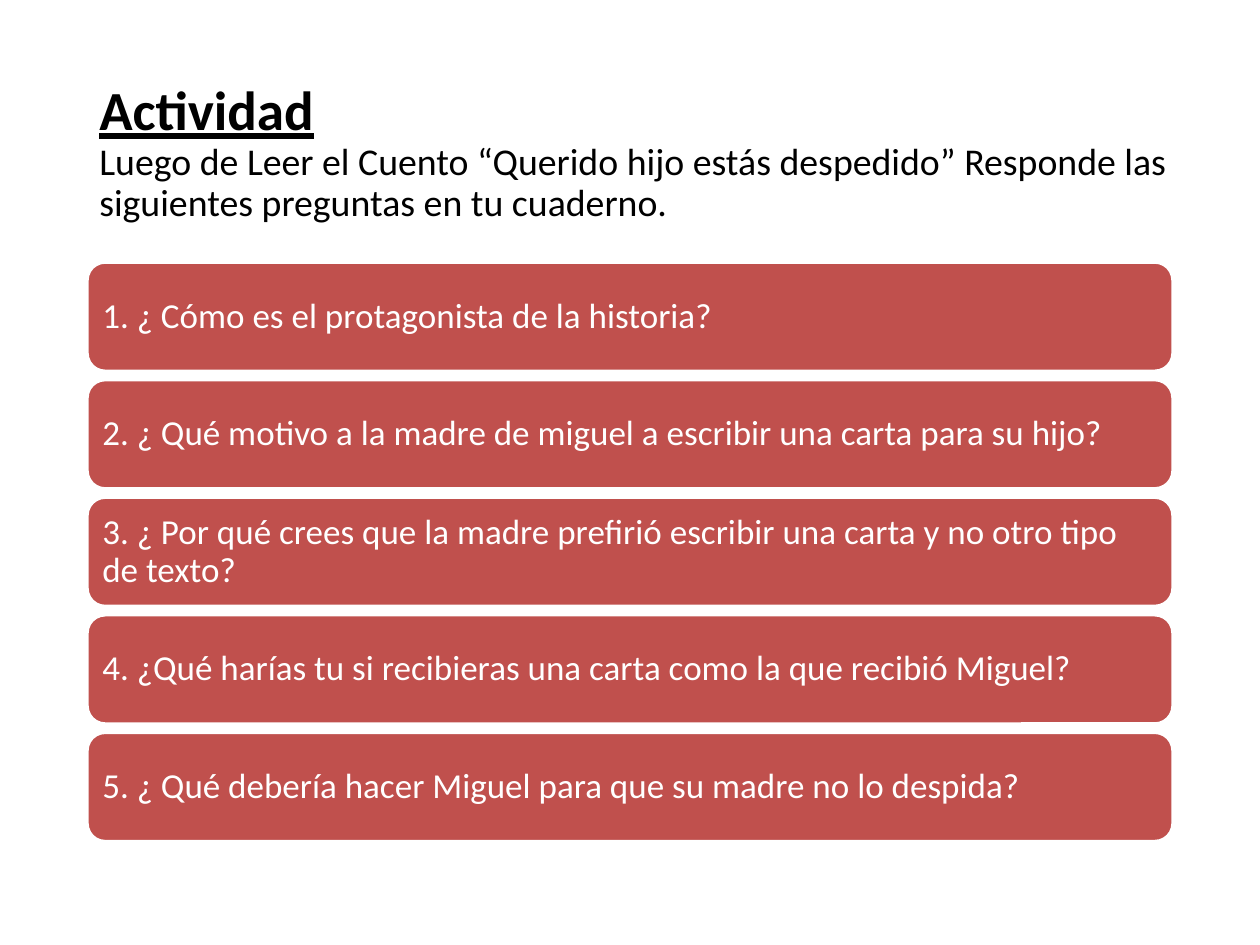
from pptx import Presentation
from pptx.dml.color import RGBColor
from pptx.enum.shapes import MSO_SHAPE as Shape
from pptx.enum.text import MSO_ANCHOR as Anchor, PP_ALIGN as Align
from pptx.util import Inches, Pt

FONT = "Calibri"
BLACK, WHITE, RED = "000000", "FFFFFF", "C0504D"
LEFT = 0.69
GAP_SHARE = 0.07  # gap between cards, as a share of the row pitch

QUESTIONS = [
    "1. ¿ Cómo es el protagonista de la historia?",
    "2. ¿ Qué motivo a la madre de miguel a escribir una carta para su hijo?",
    "3. ¿ Por qué crees que la madre prefirió escribir una carta y no otro tipo de texto?",
    "4. ¿Qué harías tu si recibieras una carta como la que recibió Miguel?",
    "5. ¿ Qué debería hacer Miguel para que su madre no lo despida?",
]


def color(value):
    return RGBColor.from_string(value)


def add_text(paragraph, text, *, size, fill=BLACK, bold=False, underline=False):
    paragraph.alignment = Align.LEFT
    paragraph.line_spacing = 0.9
    run = paragraph.add_run()
    run.text = text
    font = run.font
    font.name, font.size = FONT, Pt(size)
    font.bold, font.underline = bold, underline
    font.color.rgb = color(fill)


def prepare_frame(shape, inset_x, inset_y):
    frame = shape.text_frame
    frame.word_wrap = True
    frame.vertical_anchor = Anchor.MIDDLE
    frame.margin_left = frame.margin_right = Inches(inset_x)
    frame.margin_top = frame.margin_bottom = Inches(inset_y)
    return frame


def add_heading(slide, left, top, width, height):
    box = slide.shapes.add_textbox(*map(Inches, (left, top, width, height)))
    frame = prepare_frame(box, 0.1, 0.05)
    paragraph = frame.paragraphs[0]
    add_text(paragraph, "Actividad", size=31.5, bold=True, underline=True)
    paragraph.add_line_break()
    add_text(
        paragraph,
        "Luego de Leer el Cuento “Querido hijo estás despedido” "
        "Responde las siguientes preguntas en tu cuaderno.",
        size=21.6,
    )


def add_question_list(slide, left, top, width, height, questions):
    """Stack one card per question, with equal gaps filling the box."""
    pitch = height / (len(questions) - GAP_SHARE)
    card_height = pitch * (1 - GAP_SHARE)
    for row, question in enumerate(questions):
        card = slide.shapes.add_shape(
            Shape.ROUNDED_RECTANGLE,
            *map(Inches, (left, top + row * pitch, width, card_height)),
        )
        card.shadow.inherit = False
        card.fill.solid()
        card.fill.fore_color.rgb = color(RED)
        card.line.color.rgb = color(WHITE)
        card.line.width = Pt(2)
        frame = prepare_frame(card, 0.08, 0.08)
        add_text(frame.paragraphs[0], question, size=20, fill=WHITE)


def main():
    presentation = Presentation()
    presentation.slide_width, presentation.slide_height = Inches(10), Inches(7.5)
    slide = presentation.slides.add_slide(presentation.slide_layouts[6])
    add_heading(slide, LEFT, 0.6, 8.8, 1.24)
    add_question_list(slide, LEFT, 2.08, 10 - 2 * LEFT, 4.6, QUESTIONS)
    presentation.save("out.pptx")


if __name__ == "__main__":
    main()
